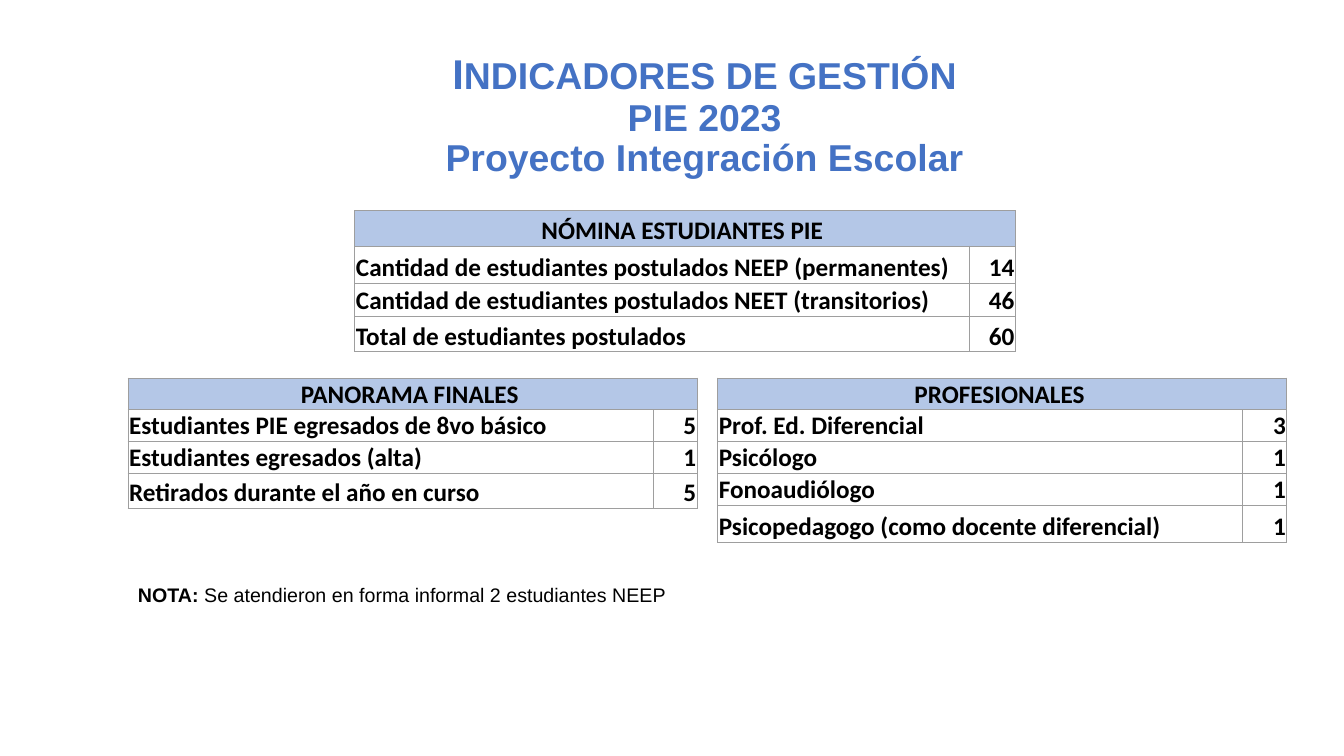
from lxml import etree
from pptx import Presentation
from pptx.dml.color import RGBColor
from pptx.enum.text import MSO_ANCHOR, PP_ALIGN
from pptx.oxml.ns import qn
from pptx.util import Inches, Pt

LEFT, CENTER, RIGHT = PP_ALIGN.LEFT, PP_ALIGN.CENTER, PP_ALIGN.RIGHT
BOTTOM = MSO_ANCHOR.BOTTOM
BLUE = RGBColor(0x44, 0x72, 0xC4)
PALE_BLUE = RGBColor(0xB4, 0xC7, 0xE7)
BLACK = RGBColor(0, 0, 0)
GRAY = RGBColor(0x9E, 0x9E, 0x9E)

deck = Presentation()
deck.slide_width, deck.slide_height = Inches(13.33), Inches(7.5)
slide = deck.slides.add_slide(deck.slide_layouts[6])
wide, high = deck.slide_width / 100, deck.slide_height / 100


def place(left, top, width, height):
    return [int(left * wide), int(top * high), int(width * wide), int(height * high)]


def write(paragraph, text, size, face, color, bold=True):
    run = paragraph.add_run()
    run.text = text
    style = {"size": Pt(size), "name": face, "bold": bold}
    for attribute, value in style.items():
        setattr(run.font, attribute, value)
    run.font.color.rgb = color


heading = slide.shapes.add_textbox(*place(18.68, 7.2, 67.52, 17.2)).text_frame
heading.word_wrap = True
heading.vertical_anchor = BOTTOM
title = heading.paragraphs[0]
title.alignment = CENTER
title.line_spacing = 0.9
write(title, "I", 29.7, "Arial", BLUE)
for position, line in enumerate(["NDICADORES DE GESTIÓN", "PIE 2023", "Proyecto Integración Escolar"]):
    if position:
        title.add_line_break()
    write(title, line, 26.7, "Arial", BLUE)

indicators = [
    ("NÓMINA ESTUDIANTES PIE ", 26.41, 27.87, (45.69, 3.45), (4.67, 4.93, 4.4, 4.67), [
        ("Cantidad de estudiantes postulados NEEP (permanentes)", 14),
        ("Cantidad de estudiantes postulados NEET (transitorios)", 46),
        ("Total de estudiantes postulados", 60),
    ]),
    ("PANORAMA FINALES ", 9.53, 50, (39.08, 3.26), (4.2, 4.2, 4.2, 4.67), [
        ("Estudiantes PIE egresados de 8vo básico", 5),
        ("Estudiantes egresados (alta)", 1),
        ("Retirados durante el año en curso", 5),
    ]),
    ("PROFESIONALES ", 53.41, 50, (39.04, 3.3), (4.2, 4.2, 4.2, 4.2, 4.93), [
        ("Prof. Ed. Diferencial", 3),
        ("Psicólogo", 1),
        ("Fonoaudiólogo", 1),
        ("Psicopedagogo (como docente diferencial)", 1),
    ]),
]
cell_format = {
    "margin_left": Inches(0.01), "margin_right": Inches(0.01),
    "margin_top": Inches(0.01), "margin_bottom": 0, "vertical_anchor": BOTTOM,
}

for caption, left, top, widths, heights, entries in indicators:
    grid = slide.shapes.add_table(
        len(heights), 2, *place(left, top, sum(widths), sum(heights))).table
    for column, width in zip(grid.columns, widths):
        column.width = int(width * wide)
    for row, height in zip(grid.rows, heights):
        row.height = int(height * high)
    grid.cell(0, 0).merge(grid.cell(0, 1))

    for r, entry in enumerate([(caption, "")] + entries):
        for c, content in enumerate(entry):
            cell = grid.cell(r, c)
            for attribute, value in cell_format.items():
                setattr(cell, attribute, value)
            properties = cell._tc.get_or_add_tcPr()
            for side in ("lnL", "lnR", "lnT", "lnB"):
                border = etree.SubElement(properties, qn(f"a:{side}"), w=str(Pt(0.75)))
                paint = etree.SubElement(border, qn("a:solidFill"))
                etree.SubElement(paint, qn("a:srgbClr"), val=str(GRAY))
            if r == 0:
                cell.fill.solid()
                cell.fill.fore_color.rgb = PALE_BLUE
            else:
                cell.fill.background()
            if content != "":
                paragraph = cell.text_frame.paragraphs[0]
                paragraph.alignment = CENTER if r == 0 else (LEFT, RIGHT)[c]
                write(paragraph, str(content), 18, "Calibri", BLACK)

remark = slide.shapes.add_textbox(*place(9.53, 76.4, 44.71, 4.53)).text_frame
remark.word_wrap = True
note = remark.paragraphs[0]
write(note, "NOTA: ", 14, "Arial", BLACK)
write(note, "Se atendieron en forma informal 2 estudiantes NEEP", 14, "Arial", BLACK, False)

deck.save("out.pptx")
